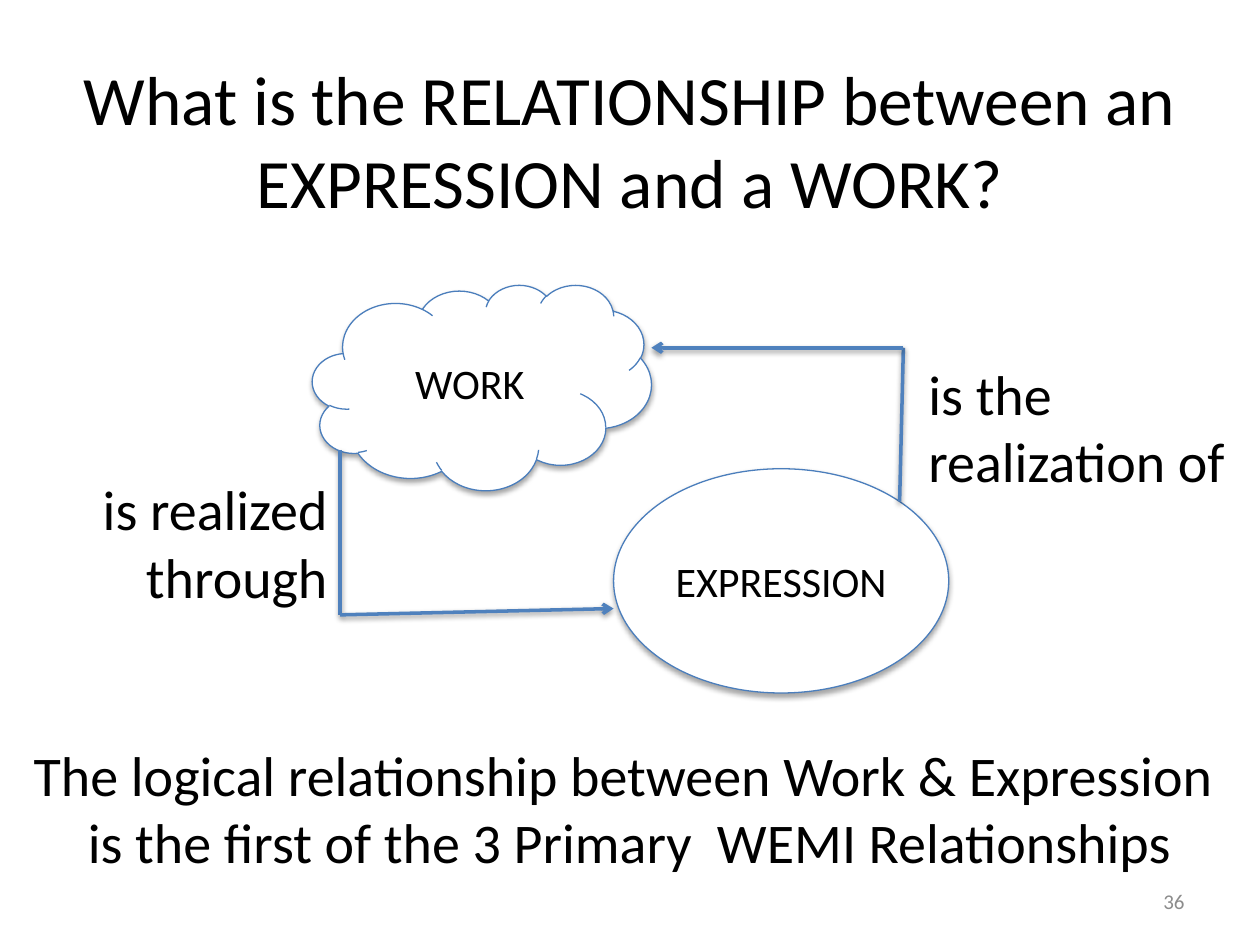
from lxml import etree
from pptx import Presentation
from pptx.dml.color import RGBColor
from pptx.enum.shapes import MSO_CONNECTOR, MSO_SHAPE
from pptx.enum.text import MSO_ANCHOR, MSO_AUTO_SIZE, PP_ALIGN
from pptx.oxml.ns import qn
from pptx.util import Inches, Pt

CLOUD, OVAL = MSO_SHAPE.CLOUD, MSO_SHAPE.OVAL
STRAIGHT = MSO_CONNECTOR.STRAIGHT
TOP, MIDDLE = MSO_ANCHOR.TOP, MSO_ANCHOR.MIDDLE
LEFT, CENTER, RIGHT = PP_ALIGN.LEFT, PP_ALIGN.CENTER, PP_ALIGN.RIGHT
NO_AUTOFIT = MSO_AUTO_SIZE.NONE

FONT = "Calibri"
TITLE_ONLY = 5
COLORS = {
    "text": "000000",
    "number": "8C8C8C",
    "fill": "FFFFFF",
    "outline": "4B7EBC",
    "arrow": "4F81BD",
    "shadow": "000000",
}


def color(name):
    return RGBColor.from_string(COLORS[name])


def write(shape, lines, size, align, anchor=TOP, color_name="text"):
    frame = shape.text_frame
    frame.word_wrap = True
    frame.auto_size = NO_AUTOFIT
    frame.vertical_anchor = anchor
    frame.text = "\n".join(lines)
    for paragraph in frame.paragraphs:
        paragraph.alignment = align
        paragraph.font.name = FONT
        paragraph.font.size = Pt(size)
        paragraph.font.color.rgb = color(color_name)


def add_shadow(properties, opacity, distance):
    effects = etree.SubElement(properties, qn("a:effectLst"))
    shadow = etree.SubElement(
        effects, qn("a:outerShdw"), blurRad=str(Pt(3.1)),
        dist=str(Pt(distance)), dir="5400000", rotWithShape="0")
    tint = etree.SubElement(shadow, qn("a:srgbClr"), val=COLORS["shadow"])
    etree.SubElement(tint, qn("a:alpha"), val=str(opacity * 1000))


def set_title(slide, text):
    title = slide.shapes.title
    title.left, title.top = Inches(0.5), Inches(0.3)
    title.width, title.height = Inches(9), Inches(1.61)
    write(title, [text], 39.6, CENTER, MIDDLE)


def add_text(slide, box, lines, size, align, anchor=TOP, color_name="text"):
    text_box = slide.shapes.add_textbox(*map(Inches, box))
    write(text_box, lines, size, align, anchor, color_name)


def add_entity(slide, kind, box, name):
    shape = slide.shapes.add_shape(kind, *map(Inches, box))
    shape.fill.solid()
    shape.fill.fore_color.rgb = color("fill")
    shape.line.color.rgb = color("outline")
    shape.line.width = Pt(0.75)
    add_shadow(shape._element.spPr, 35, 1.8)
    write(shape, [name], 24, CENTER, MIDDLE)


def add_segment(slide, start, end, arrow):
    connector = slide.shapes.add_connector(
        STRAIGHT, *map(Inches, start + end))
    connector.line.color.rgb = color("arrow")
    connector.line.width = Pt(2)
    if arrow:
        etree.SubElement(connector.line._get_or_add_ln(),
                         qn("a:tailEnd"), type="arrow")
    add_shadow(connector._element.spPr, 38, 1.6)


def add_bent_arrow(slide, start, corner, end):
    add_segment(slide, start, corner, False)
    add_segment(slide, corner, end, True)


def main():
    presentation = Presentation()
    presentation.slide_width = Inches(10)
    presentation.slide_height = Inches(7.5)
    slide = presentation.slides.add_slide(
        presentation.slide_layouts[TITLE_ONLY])

    set_title(slide, "What is the RELATIONSHIP between an "
                     "EXPRESSION and a WORK?")
    add_text(slide, (7.17, 6.95, 2.33, 0.4), ["36"], 12, RIGHT, MIDDLE,
             "number")

    add_entity(slide, CLOUD, (2.48, 2.26, 2.69, 1.63), "WORK")
    add_entity(slide, OVAL, (4.87, 3.72, 2.66, 1.78), "EXPRESSION")

    add_bent_arrow(slide, (2.7, 3.57), (2.7, 4.88), (4.87, 4.83))
    add_bent_arrow(slide, (7.14, 3.98), (7.17, 2.76), (5.17, 2.76))

    add_text(slide, (0.37, 3.72, 2.33, 1.18), ["is realized through"],
             32, RIGHT)
    add_text(slide, (7.27, 2.8, 2.73, 1.18), ["is the realization of"],
             32, LEFT)
    add_text(slide, (0, 5.83, 10, 1.18),
             ["The logical relationship between Work & Expression ",
              "is the first of the 3 Primary  WEMI Relationships"],
             32, CENTER)

    presentation.save("out.pptx")


if __name__ == "__main__":
    main()
